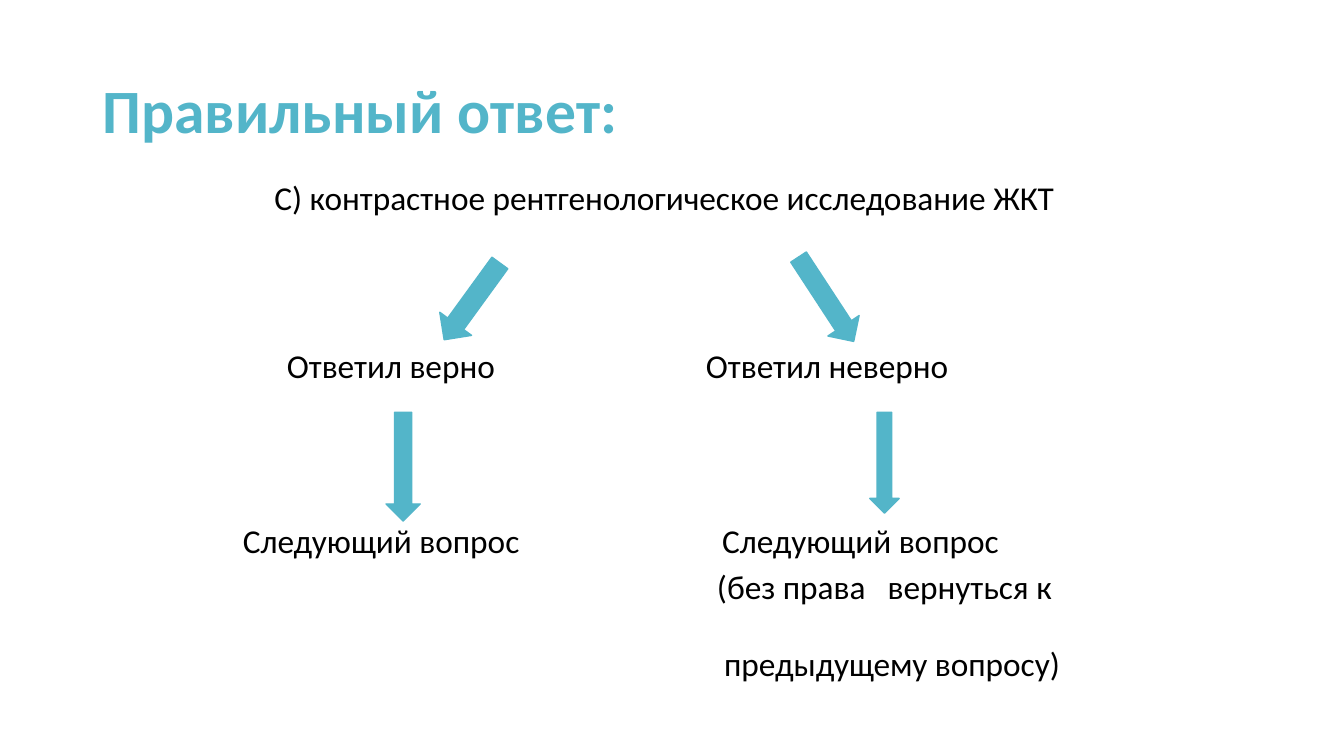
from lxml.etree import SubElement
from pptx import Presentation
from pptx.dml.color import RGBColor
from pptx.enum.shapes import MSO_SHAPE as Shape
from pptx.enum.text import MSO_ANCHOR as Anchor, PP_ALIGN as Align
from pptx.oxml.ns import qn
from pptx.util import Cm, Pt

TEAL = RGBColor(0x53, 0xB5, 0xC9)
BLACK = RGBColor(0, 0, 0)
HEADING = {"name": "Calibri", "size": Pt(44), "bold": True}
BODY = {"name": "Calibri", "size": Pt(23.8), "bold": False}
LINE_HEIGHT = 1.03


def add_line(paragraph, text, style, color):
    run = paragraph.add_run()
    run.text = text
    for key, value in style.items():
        setattr(run.font, key, value)
    run.font.color.rgb = color


def add_frame(slide, left, top, width, height):
    box = slide.shapes.add_textbox(Cm(left), Cm(top), Cm(width), Cm(height))
    frame = box.text_frame
    layout = {"word_wrap": True, "vertical_anchor": Anchor.TOP, "margin_left": 0,
              "margin_right": 0, "margin_top": 0, "margin_bottom": 0}
    for key, value in layout.items():
        setattr(frame, key, value)
    return frame


def add_title(slide, left, top, width, height):
    frame = add_frame(slide, left, top, width, height)
    frame.vertical_anchor = Anchor.MIDDLE
    heading = frame.paragraphs[0]
    heading.line_spacing = 0.9
    add_line(heading, "Правильный ответ:", HEADING, TEAL)


def add_answer(slide, left, top, width):
    answer = add_frame(slide, left, top, width, LINE_HEIGHT).paragraphs[0]
    answer.alignment = Align.CENTER
    add_line(answer, "С) контрастное рентгенологическое исследование ЖКТ", BODY, BLACK)


def add_arrow(slide, left, top, width, height, rotation=0):
    arrow = slide.shapes.add_shape(Shape.DOWN_ARROW, Cm(left), Cm(top), Cm(width), Cm(height))
    arrow.rotation = rotation
    arrow.shadow.inherit = False
    arrow.fill.solid()
    arrow.fill.fore_color.rgb = TEAL
    arrow.line.color.rgb = TEAL
    arrow.line.width = Pt(1)


def add_branch(slide, left, top, outcome, outcome_shift, steps, steps_shift, arrows):
    """Outcome and next steps; arrows are placed from the branch corner."""
    label = add_frame(slide, left + outcome_shift, top + 2.44, 8, LINE_HEIGHT)
    add_line(label.paragraphs[0], outcome, BODY, BLACK)

    # Next steps: text, space before (pt), indent (cm), tab stop (cm)
    frame = add_frame(slide, left + steps_shift, top + 6.85, 10, LINE_HEIGHT * len(steps))
    for number, (text, space, indent, tab) in enumerate(steps):
        step = frame.add_paragraph() if number else frame.paragraphs[0]
        step.space_before = Pt(space)
        add_line(step, text, BODY, BLACK)
        properties = step._p.get_or_add_pPr()
        properties.set("marL", str(Cm(indent)))
        if tab:
            stops = SubElement(properties, qn("a:tabLst"))
            SubElement(stops, qn("a:tab"), pos=str(Cm(tab)), algn="l")

    for x, y, width, height, rotation in arrows:
        add_arrow(slide, left + x, top + y, width, height, rotation)


def main():
    deck = Presentation()
    deck.slide_width, deck.slide_height = Cm(33.87), Cm(19.05)
    slide = deck.slides.add_slide(deck.slide_layouts[6])

    add_title(slide, 2.59, 1.02, 28.7, 3.68)
    add_answer(slide, 5.92, 4.47, 21.62)

    # Correct answer
    add_branch(slide, 6.12, 6.27, "Ответил верно", 1.11,
               [("Следующий вопрос", 0, 0, 0)], 0,
               [(5.28, 0.13, 0.99, 2.39, 36), (3.61, 4.12, 0.86, 2.74, 0)])

    # Wrong answer
    add_branch(slide, 17.79, 6.27, "Ответил неверно", 0,
               [("Следующий вопрос", 0, 0.13, 0),
                ("(без права\tвернуться к", 3.8, 0, 4.3),
                ("предыдущему вопросу)", 26.6, 0.18, 0)], 0.28,
               [(2.56, 0, 0.94, 2.54, 326.8), (4.13, 4.12, 0.74, 2.54, 0)])

    deck.save("out.pptx")


if __name__ == "__main__":
    main()
